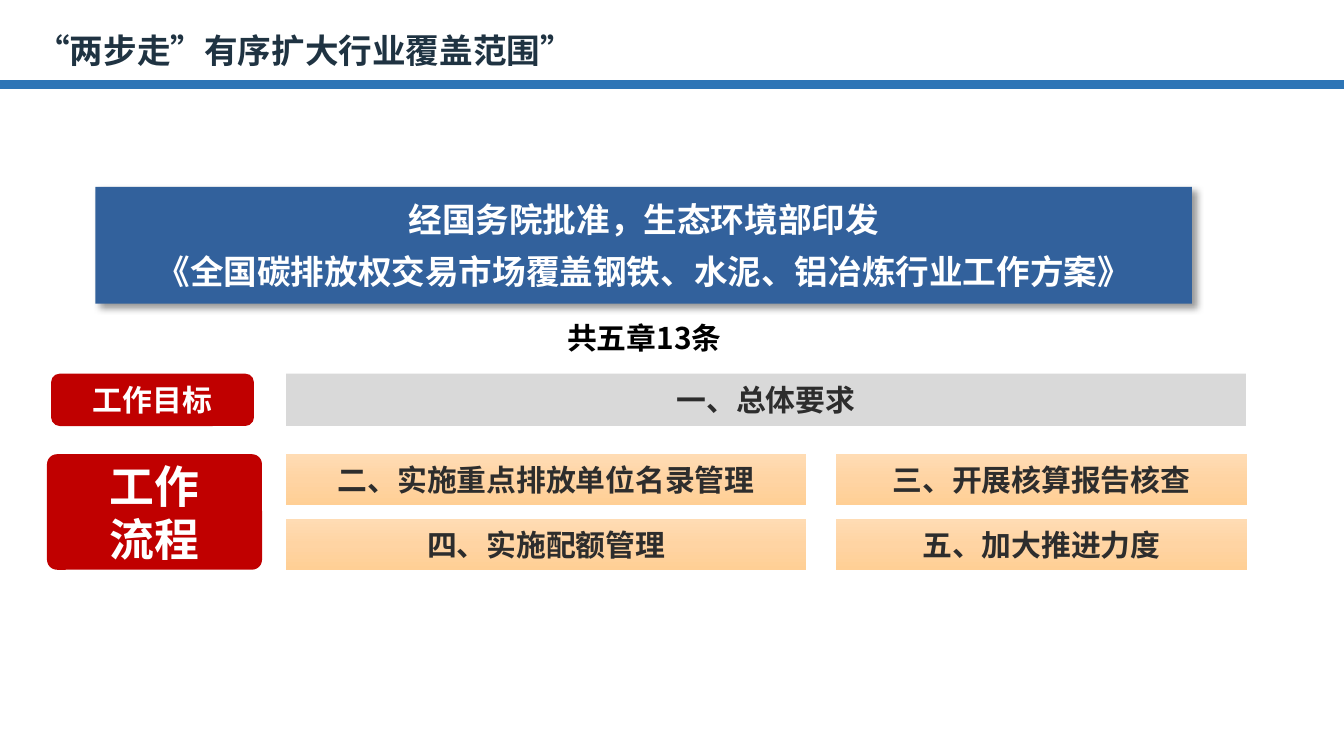
from copy import deepcopy

from lxml import etree
from pptx import Presentation
from pptx.dml.color import RGBColor
from pptx.enum import shapes, text
from pptx.oxml.ns import qn
from pptx.util import Inches, Pt

SANS, SERIF = "Noto Sans CJK SC", "Times New Roman"
COLORS = {
    "title": "1F3342", "rule": "2E75B6", "banner": "32619C", "label": "C00000",
    "overview": "D9D9D9", "dark": "2D2D2D", "white": "FFFFFF", "black": "000000",
}
CHAPTER_GRADIENT = [(0, "FFDCB4"), (0.5, "FFD4A3"), (1, "FFCF95")]

TITLE = "“两步走”有序扩大行业覆盖范围”"
BANNER = ["经国务院批准，生态环境部印发", "《全国碳排放权交易市场覆盖钢铁、水泥、铝冶炼行业工作方案》"]
SUMMARY = "共五章13条"
OVERVIEW = "一、总体要求"
GOAL_LABEL = ["工作目标"]
PROCESS_LABEL = ["工作", "流程"]
CHAPTERS = [
    ["二、实施重点排放单位名录管理", "三、开展核算报告核查"],
    ["四、实施配额管理", "五、加大推进力度"],
]
COLUMNS = [(2.13, 3.87), (6.22, 3.06)]  # left, width
GOAL_TOP, PROCESS_TOP, ROW_STEP, BAR_HEIGHT = 2.78, 3.38, 0.48, 0.38


def rgb(name):
    return RGBColor.from_string(COLORS[name])


def write(shape, lines, size, color, font=SANS, align=text.PP_ALIGN.CENTER, after=0):
    frame = shape.text_frame
    frame.word_wrap = True
    frame.text = "\n".join(lines)
    for paragraph in frame.paragraphs:
        paragraph.alignment = align
        paragraph.space_after = Pt(after)
        for run in paragraph.runs:
            run.font.name, run.font.size, run.font.bold = font, Pt(size), True
            run.font.color.rgb = rgb(color)
            east_asian = etree.SubElement(run._r.get_or_add_rPr(), qn("a:ea"))
            east_asian.set("typeface", SANS)


def add_box(slide, at, fill=None, preset=shapes.MSO_SHAPE.RECTANGLE):
    box = slide.shapes.add_shape(preset, *map(Inches, at))
    box.shadow.inherit = False
    box.line.fill.background()
    box.text_frame.vertical_anchor = text.MSO_ANCHOR.MIDDLE
    if fill:
        box.fill.solid()
        box.fill.fore_color.rgb = rgb(fill)
    return box


def add_label(slide, at, lines, size, corner):
    label = add_box(slide, at, "label", shapes.MSO_SHAPE.ROUNDED_RECTANGLE)
    label.adjustments[0] = corner
    frame = label.text_frame
    frame.margin_left = frame.margin_right = Inches(0.13)
    frame.margin_top = frame.margin_bottom = Inches(0.07)
    write(label, lines, size, "white")


def fill_chapter(box):
    """Fill with the three-stop gradient, running top to bottom."""
    box.fill.gradient()
    box.fill.gradient_angle = 270
    stop_list = box._element.spPr.find(".//" + qn("a:gsLst"))
    stop_list.insert(1, deepcopy(stop_list[0]))
    for stop, (position, color) in zip(box.fill.gradient_stops, CHAPTER_GRADIENT):
        stop.position = position
        stop.color.rgb = RGBColor.from_string(color)


def add_shadow(box):
    effects = box._element.spPr.find(qn("a:effectLst"))
    shadow = etree.SubElement(
        effects, qn("a:outerShdw"), blurRad=str(Pt(4)), dist=str(Pt(3)),
        dir=str(45 * 60000), algn="tl", rotWithShape="0")
    color = etree.SubElement(shadow, qn("a:srgbClr"), val=COLORS["black"])
    etree.SubElement(color, qn("a:alpha"), val="40000")


def main():
    deck = Presentation()
    deck.slide_width = Inches(10)
    deck.slide_height = deck.slide_width * 9 // 16
    slide = deck.slides.add_slide(deck.slide_layouts[5])

    title = slide.shapes.title
    title.left, title.top, title.width, title.height = map(Inches, (0.17, 0.17, 9.65, 0.4))
    title.text_frame.vertical_anchor = text.MSO_ANCHOR.TOP
    write(title, [TITLE], 18, "title", align=text.PP_ALIGN.LEFT)

    rule = slide.shapes.add_connector(
        shapes.MSO_CONNECTOR.STRAIGHT, 0, Inches(0.63), deck.slide_width, Inches(0.63))
    rule.line.color.rgb = rgb("rule")
    rule.line.width = Pt(4.5)
    etree.SubElement(rule._element.spPr, qn("a:effectLst"))

    overview_left = COLUMNS[0][0]
    overview = add_box(slide, (overview_left, GOAL_TOP, 7.14, 0.39), "overview")
    write(overview, [OVERVIEW], 16, "dark", SERIF)

    for row, chapters in enumerate(CHAPTERS):
        for (left, width), chapter in zip(COLUMNS, chapters):
            bar = add_box(slide, (left, PROCESS_TOP + row * ROW_STEP, width, BAR_HEIGHT))
            fill_chapter(bar)
            write(bar, [chapter], 16, "dark", SERIF)

    add_label(slide, (0.38, GOAL_TOP, 1.51, 0.39), GOAL_LABEL, 16, 0.167)
    add_label(slide, (0.35, PROCESS_TOP, 1.6, 0.86), PROCESS_LABEL, 24, 0.087)

    summary = slide.shapes.add_textbox(*map(Inches, (-0.14, 2.33, 9.87, 0.37)))
    write(summary, [SUMMARY], 16, "black")

    banner = add_box(slide, (0.71, 1.39, 8.16, 0.87), "banner")
    add_shadow(banner)
    write(banner, BANNER, 18, "white", after=6)

    deck.save("out.pptx")


if __name__ == "__main__":
    main()
